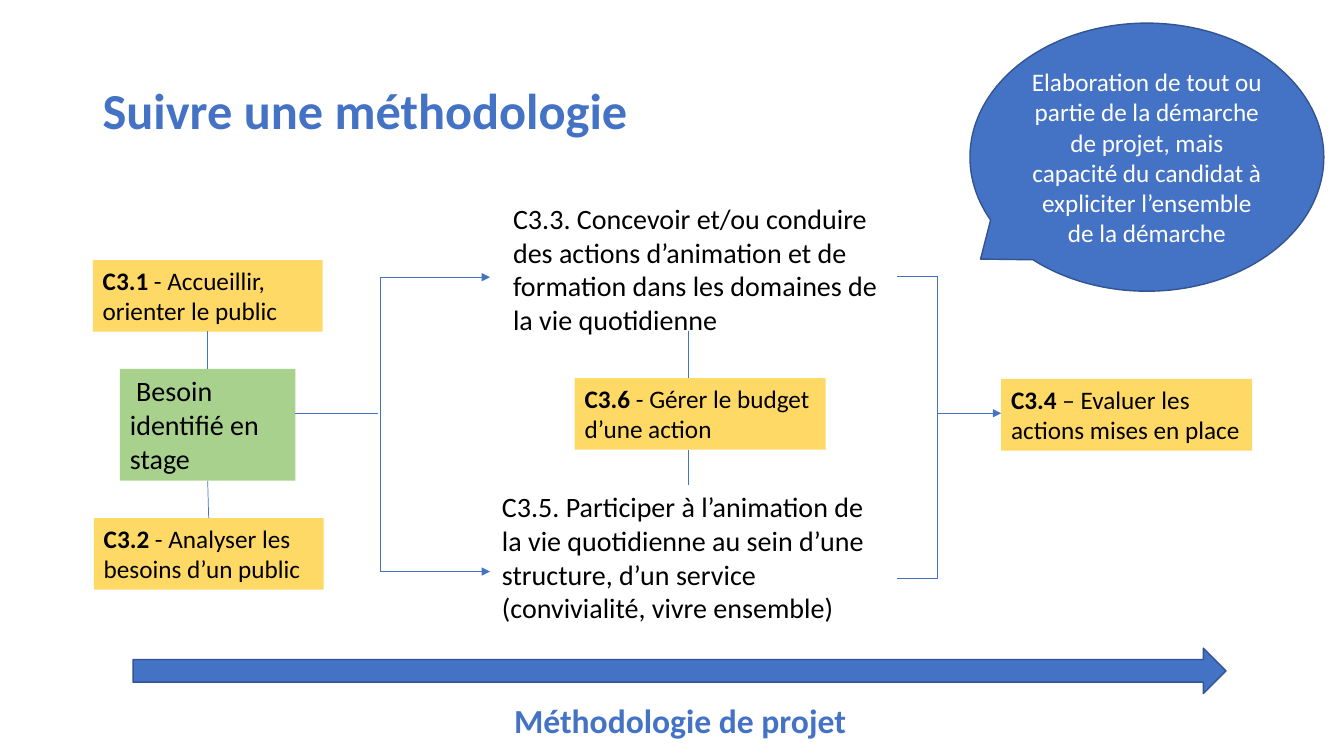
from lxml.etree import SubElement
from pptx import Presentation
from pptx.dml.color import RGBColor
from pptx.enum.shapes import MSO_CONNECTOR as CONN, MSO_SHAPE as SHAPE
from pptx.enum.text import MSO_ANCHOR as ANCHOR, PP_ALIGN as ALIGN
from pptx.oxml.ns import qn
from pptx.util import Inches, Pt

BLUE = RGBColor(0x44, 0x72, 0xC4)
DARK_BLUE = RGBColor(0x32, 0x54, 0x91)
GREEN = RGBColor(0xA9, 0xD1, 0x8E)
YELLOW = RGBColor(0xFF, 0xD9, 0x66)
BLACK = RGBColor(0, 0, 0)
WHITE = RGBColor(0xFF, 0xFF, 0xFF)

SKILLS = [
    (0.92, 2.58, 2.28, "C3.1", " - Accueillir, orienter le public"),
    (0.93, 5.14, 2.28, "C3.2", " - Analyser les besoins d’un public"),
    (5.7, 3.75, 2.49, "C3.6", " - Gérer le budget d’une action"),
    (9.93, 3.76, 2.49, "C3.4", " – Evaluer les actions mises en place"),
]
ACTIONS = [
    (4.99, 1.95, "C3.3. Concevoir et/ou conduire des actions d’animation et de "
                 "formation dans les domaines de la vie quotidienne"),
    (4.88, 4.81, "C3.5. Participer à l’animation de la vie quotidienne au sein "
                 "d’une structure, d’un service (convivialité, vivre ensemble)"),
]
LINES = [
    (2.06, 3.28, 2.06, 3.66),
    (2.06, 4.77, 2.07, 5.14),
    (2.93, 4.1, 3.75, 4.1),
    (3.77, 2.75, 3.77, 5.67),
    (6.83, 3.28, 6.83, 3.75),
    (6.83, 4.46, 6.83, 4.81),
    (8.9, 2.74, 9.3, 2.74),
    (9.3, 2.74, 9.3, 5.74),
    (9.3, 5.74, 8.9, 5.74),
]
ARROWS = [
    (3.78, 2.75, 4.86, 2.75),
    (3.78, 5.67, 4.86, 5.67),
    (9.29, 4.1, 9.93, 4.1),
]


def write(s, text, size, color, lead="", bold=None, anchor=ANCHOR.TOP, align=ALIGN.LEFT):
    """Fill a shape with one paragraph, after an optional bold lead, and return it."""
    tf = s.text_frame
    tf.word_wrap = True
    tf.vertical_anchor = anchor
    p = tf.paragraphs[0]
    p.alignment = align
    p.font.name = "Calibri"
    p.font.size = Pt(size)
    p.font.color.rgb = color
    p.font.bold = bold
    if lead:
        r = p.add_run()
        r.text = lead
        r.font.bold = True
    p.add_run().text = text
    return p


def add_label(slide, box, text, size, color, **style):
    """Add a text box and return its paragraph."""
    s = slide.shapes.add_textbox(*map(Inches, box))
    return write(s, text, size, color, **style)


def add_block(slide, kind, box, fill, outline=None):
    """Add a filled preset shape, outlined when a colour is given."""
    s = slide.shapes.add_shape(kind, *map(Inches, box))
    s.shadow.inherit = False
    s.fill.solid()
    s.fill.fore_color.rgb = fill
    if outline is None:
        s.line.fill.background()
    else:
        s.line.color.rgb = outline
        s.line.width = Pt(1)
    return s


def add_line(slide, ends, arrow=False):
    """Add a thin straight connector, with an arrowhead on request."""
    s = slide.shapes.add_connector(CONN.STRAIGHT, *map(Inches, ends))
    s.line.color.rgb = BLUE
    s.line.width = Pt(0.5)
    if arrow:
        SubElement(s.line._get_or_add_ln(), qn("a:tailEnd"), type="triangle")
    SubElement(s._element.spPr, qn("a:effectLst"))


def main():
    """Build the slide and save it."""
    prs = Presentation()
    prs.slide_width, prs.slide_height = Inches(13.33), Inches(7.5)
    slide = prs.slides.add_slide(prs.slide_layouts[6])

    title = add_label(slide, (0.92, 0.4, 11.5, 1.45), "Suivre une méthodologie",
                      36, BLUE, bold=True, anchor=ANCHOR.MIDDLE)
    title.line_spacing = 0.9

    need = add_block(slide, SHAPE.RECTANGLE, (1.19, 3.66, 1.74, 1.11), GREEN)
    write(need, " Besoin identifié en stage", 20, BLACK)
    for left, top, width, code, text in SKILLS:
        s = add_block(slide, SHAPE.RECTANGLE, (left, top, width, 0.71), YELLOW)
        write(s, text, 18, BLACK, lead=code)
    for left, top, text in ACTIONS:
        add_label(slide, (left, top, 3.91, 1.45), text, 20, BLACK)

    for ends in LINES:
        add_line(slide, ends)
    for ends in ARROWS:
        add_line(slide, ends, arrow=True)

    add_block(slide, SHAPE.RIGHT_ARROW, (1.32, 6.43, 10.84, 0.45), BLUE, DARK_BLUE)
    add_label(slide, (5, 6.89, 5.27, 0.5), "Méthodologie de projet", 24, BLUE, bold=True)

    callout = add_block(slide, SHAPE.OVAL_CALLOUT, (9.62, 0.23, 3.51, 2.66), BLUE, DARK_BLUE)
    callout.adjustments[0] = -0.47
    callout.adjustments[1] = 0.38
    write(callout, "Elaboration de tout ou partie de la démarche de projet, mais capacité "
          "du candidat à expliciter l’ensemble de la démarche", 18, WHITE,
          anchor=ANCHOR.MIDDLE, align=ALIGN.CENTER)

    prs.save("out.pptx")


if __name__ == "__main__":
    main()
